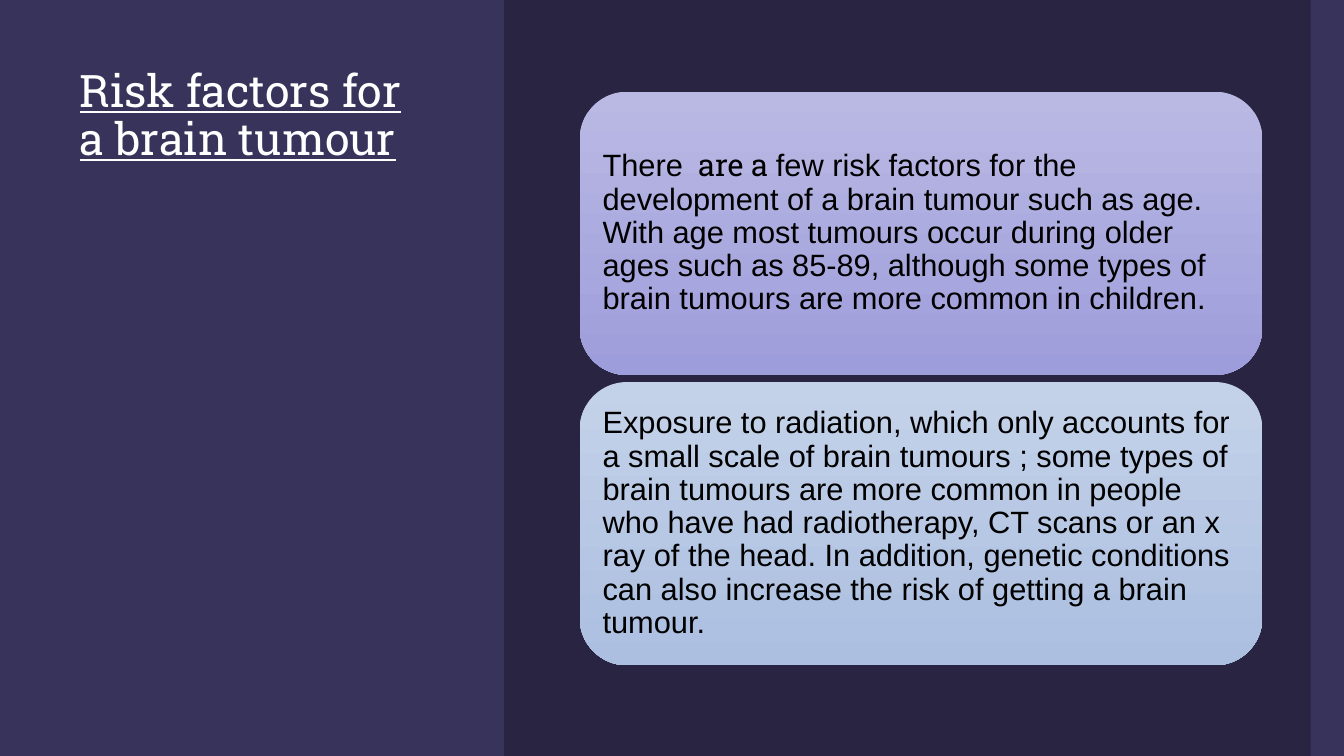
from pptx import Presentation
from pptx import util as u
from pptx.dml import color
from pptx.enum import shapes, text

CARDS = [
    (("BAB9E4", "9E9DDB"), [
        ("There", "Arial"),
        ("  are a ", "Roboto Slab"),
        ("few risk factors for the development of a brain tumour such as age. "
         "With age most tumours occur during older ages such as 85-89, although "
         "some types of brain tumours are more common in children.", "Arial"),
    ]),
    (("C4D2E9", "ACBFE1"), [
        ("Exposure to radiation, which only accounts for a small scale of brain "
         "tumours ; some types of brain tumours are more common in people who "
         "have had radiotherapy, CT scans or an x ray of the head. In addition, "
         "genetic conditions can also increase the risk of getting a brain "
         "tumour.", "Arial"),
    ]),
]
EDGE = [(4.84, 7.5), (4.84, 7.29), (4.79, 4.17), (4.84, 2.81), (4.84, 1.64),
        (4.84, 1.18), (4.82, 0.85), (4.79, 0.6), (4.82, 0.11)]


def rgb(value):
    """Turn a hex string into a colour."""
    return color.RGBColor.from_string(value)


def apply(target, values):
    """Set every attribute named in a dict of format values."""
    for name, value in values.items():
        setattr(target, name, value)


def paint(shape, value):
    """Give a shape a flat fill without line or shadow."""
    shape.fill.solid()
    shape.fill.fore_color.rgb = rgb(value)
    shape.line.fill.background()
    shape.shadow.inherit = False


def format_frame(frame, inset, anchor):
    """Set wrapping, margins and anchor of a text frame."""
    sides = ("left", "top", "right", "bottom")
    apply(frame, {f"margin_{side}": u.Inches(inset) for side in sides})
    apply(frame, {"word_wrap": True, "vertical_anchor": anchor,
                  "auto_size": text.MSO_AUTO_SIZE.NONE})


def write(para, runs, color_hex, **values):
    """Fill a left-aligned paragraph with runs of text and font."""
    apply(para, {"alignment": text.PP_ALIGN.LEFT, "line_spacing": 0.9})
    for words, face in runs:
        span = para.add_run()
        span.text = words
        apply(span.font, {"name": face, **values})
        span.font.color.rgb = rgb(color_hex)


def add_backdrop(page, width, height):
    """Draw the light panel and the dark area with its uneven edge."""
    panel = page.shapes.add_shape(shapes.MSO_SHAPE.RECTANGLE, 0, 0,
                                  u.Inches(width), u.Inches(height))
    paint(panel, "38335B")
    outline = page.shapes.build_freeform(4.82, 0, scale=u.Inches(1))
    outline.add_line_segments([(width, 0), (width, height), *EDGE])
    paint(outline.convert_to_shape(), "282441")


def add_title(page, left, top, width, height):
    """Place the title placeholder above the backdrop."""
    title = page.shapes.title
    title.element.getparent().append(title.element)
    apply(title, {"left": u.Inches(left), "top": u.Inches(top),
                  "width": u.Inches(width), "height": u.Inches(height)})
    format_frame(title.text_frame, 0, text.MSO_ANCHOR.TOP)
    write(title.text_frame.paragraphs[0],
          [("Risk factors for a brain tumour", "Roboto Slab")], "FFFFFF",
          size=u.Pt(32), underline=True)


def add_cards(page, left, top, width, height, gap=0.07):
    """Stack the rounded gradient cards evenly in the given box."""
    card_height = (height - gap * (len(CARDS) - 1)) / len(CARDS)
    for index, (tints, runs) in enumerate(CARDS):
        card = page.shapes.add_shape(
            shapes.MSO_SHAPE.ROUNDED_RECTANGLE, u.Inches(left),
            u.Inches(top + index * (card_height + gap)),
            u.Inches(width), u.Inches(card_height))
        paint(card, tints[0])
        card.fill.gradient()
        card.fill.gradient_angle = 270
        for stop, tint, position in zip(card.fill.gradient_stops, tints, (0, 1)):
            stop.color.rgb = rgb(tint)
            stop.position = position
        format_frame(card.text_frame, 0.09, text.MSO_ANCHOR.MIDDLE)
        write(card.text_frame.paragraphs[0], runs, "000000", size=u.Pt(22))


def main():
    """Build the slide and save the deck."""
    deck = Presentation()
    apply(deck, {"slide_width": u.Inches(13.33), "slide_height": u.Inches(7.5)})
    page = deck.slides.add_slide(deck.slide_layouts[5])
    page.background.fill.solid()
    page.background.fill.fore_color.rgb = rgb("282441")
    add_backdrop(page, 13.33, 7.5)
    add_title(page, 0.79, 0.68, 3.4, 6.03)
    add_cards(page, 5.75, 0.91, 6.77, 5.69)
    deck.save("out.pptx")


if __name__ == "__main__":
    main()
